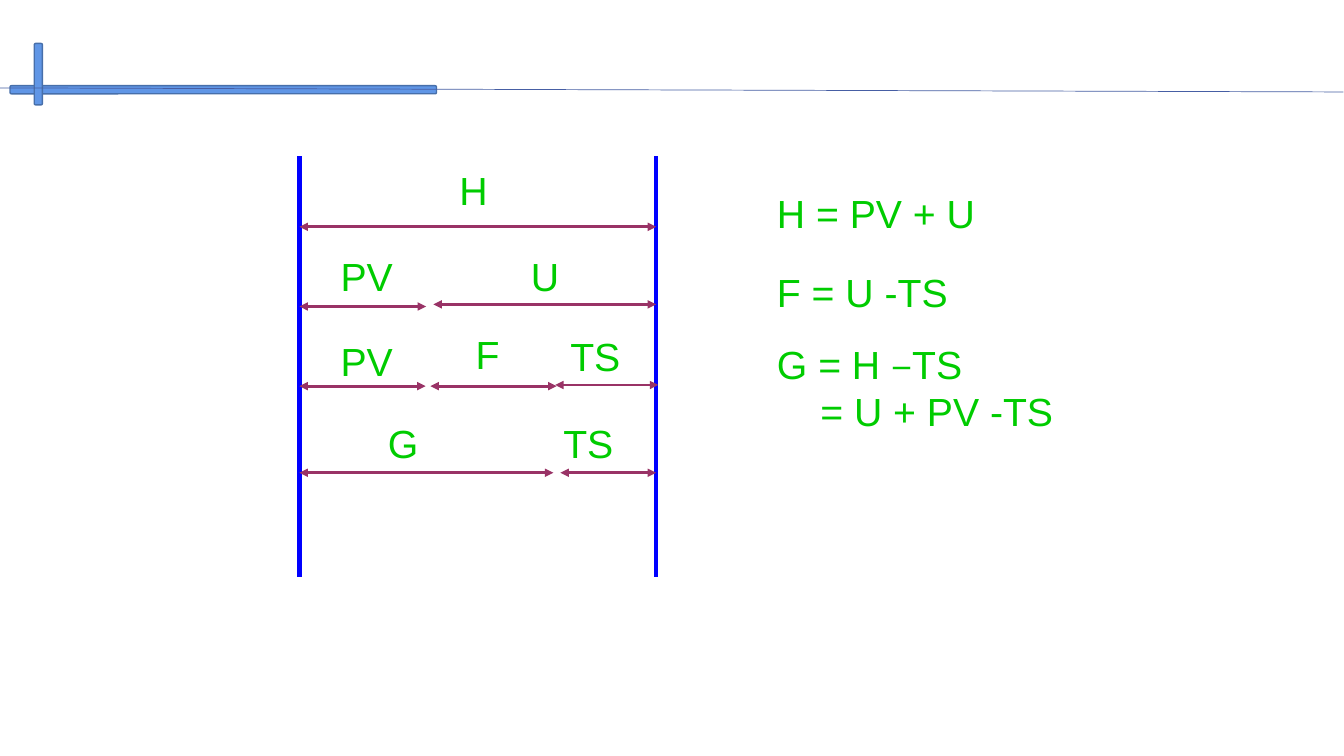
from lxml.etree import SubElement
from pptx import Presentation
from pptx.dml.color import RGBColor
from pptx.enum.shapes import MSO_CONNECTOR, MSO_SHAPE
from pptx.enum.text import MSO_ANCHOR
from pptx.oxml.ns import qn
from pptx.util import Pt

GREEN, BLUE, PLUM = "00CC00", "0000FF", "993366"
LEFT, RIGHT = 213.9, 468.7
BAR_TOP, BAR_BOTTOM = 111.6, 411.8
LABEL_HEIGHT = 47.5

ornaments = [(7.2, 61.2, 304.6, 5.8), (24.5, 31, 5.8, 43.9)]
spans = [
    (LEFT, RIGHT, 162),
    (309.6, RIGHT, 217.4),
    (LEFT, 304.4, 218.9),
    (LEFT, 304, 275.8),
    (307.4, 397.6, 275.8),
    (396.6, 470.2, 275),
    (LEFT, 395.3, 337.7),
    (400.3, RIGHT, 337.7),
]
labels = [
    ("H", 321.1, 111.6),
    ("PV", 236.2, 173.5),
    ("U", 372.2, 173.5),
    ("PV", 236.2, 234),
    ("F", 332.6, 229.3),
    ("TS", 400.3, 230.4),
    ("TS", 395.3, 292.3),
    ("G", 270, 292.3),
]
FORMULA_LEFT, FORMULA_WIDTH = 547.9, 226.8
formulas = [
    ([["H = PV + U"]], 128.2),
    ([["F = U -TS"]], 185),
    ([["G = H ", "–", "TS"], ["= U + PV -TS"]], 252.7),
]
CONTINUATION_INDENT = 31


def color(value):
    return RGBColor.from_string(value)


def add_line(page, start, end, line_color, width, arrows=False):
    line = page.shapes.add_connector(MSO_CONNECTOR.STRAIGHT, *map(Pt, start + end))
    line.line.color.rgb = color(line_color)
    line.line.width = Pt(width)
    if arrows:
        outline = line.line._get_or_add_ln()
        for tip in ("a:headEnd", "a:tailEnd"):
            SubElement(outline, qn(tip), type="triangle")
    SubElement(line._element.spPr, qn("a:effectLst"))


def add_text(page, lines, left, top, width):
    box = page.shapes.add_textbox(Pt(left), Pt(top), Pt(width), Pt(LABEL_HEIGHT))
    frame = box.text_frame
    frame.word_wrap = True
    frame.vertical_anchor = MSO_ANCHOR.MIDDLE
    for index, pieces in enumerate(lines):
        para = frame.add_paragraph() if index else frame.paragraphs[0]
        if index:
            para._p.get_or_add_pPr().set("marL", str(Pt(CONTINUATION_INDENT)))
        for piece in pieces:
            span = para.add_run()
            span.text = piece
            span.font.name = "Noto Sans CJK SC" if piece == "–" else "Arial"
            span.font.size = Pt(28)
            span.font.color.rgb = color(GREEN)


def main():
    deck = Presentation()
    deck.slide_width, deck.slide_height = Pt(960), Pt(540)
    page = deck.slides.add_slide(deck.slide_layouts[6])

    for place in ornaments:
        ornament = page.shapes.add_shape(MSO_SHAPE.ROUNDED_RECTANGLE, *map(Pt, place))
        ornament.shadow.inherit = False
        ornament.fill.solid()
        ornament.fill.fore_color.rgb = color("6096E6")
        ornament.line.color.rgb = color("476FAA")
        ornament.line.width = Pt(1)
    add_line(page, (0, 62.8), (959.5, 65.7), "465EA4", 0.5)

    for x in (LEFT, RIGHT):
        add_line(page, (x, BAR_TOP), (x, BAR_BOTTOM), BLUE, 3)
    for start, end, y in spans:
        add_line(page, (start, y), (end, y), PLUM, 2, arrows=True)

    for text, left, top in labels:
        add_text(page, [[text]], left, top, 45.4 if text == "H" else 62.6)
    for lines, top in formulas:
        add_text(page, lines, FORMULA_LEFT, top, FORMULA_WIDTH)

    deck.save("out.pptx")


if __name__ == "__main__":
    main()
